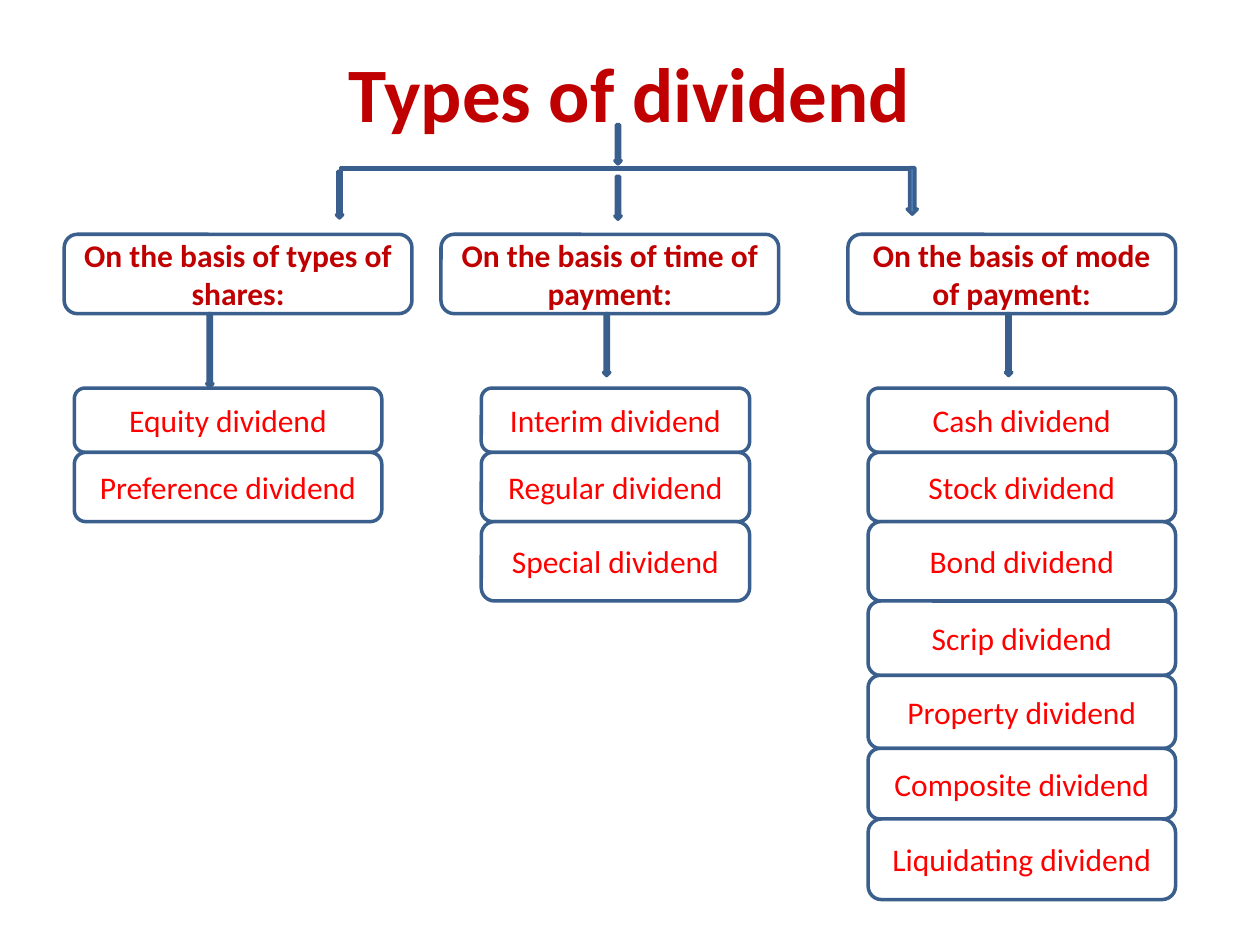
from dataclasses import dataclass
from itertools import accumulate, pairwise

from pptx import Presentation
from pptx.dml.color import RGBColor as Color
from pptx.enum.shapes import MSO_SHAPE as Shape
from pptx.enum.text import MSO_ANCHOR as Anchor, PP_ALIGN as Align
from pptx.util import Inches, Pt


@dataclass(frozen=True)
class Theme:
    font: str = "Calibri"
    title_size: int = 44
    text_size: int = 18
    line_width: int = 2
    heading: str = "C00000"
    item: str = "FF0000"
    box: str = "FFFFFF"
    arrow: str = "4F81BD"
    outline: str = "3A5F8C"


THEME = Theme()

# The grid has 100 columns and 75 rows on a 10 x 7.5 inch slide
CELL = Inches(0.1)
HEADING_TOP, HEADING_HEIGHT = 18.6, 6.3
ITEM_TOP = 30.8
ITEM_HEIGHTS = (5.1, 5.5, 6.3, 5.9, 5.8, 5.6, 6.4)
ITEM_EDGES = list(accumulate(ITEM_HEIGHTS, initial=ITEM_TOP))
ARROW_WIDTH = 0.5

# Each branch: heading, its (left, width), arrow (left, height), items' (left, width), items
BRANCHES = (
    ("On the basis of types of shares:", (5.1, 27.6), (16.4, 5.8), (5.9, 24.4),
     ("Equity dividend", "Preference dividend")),
    ("On the basis of time of payment:", (35, 26.8), (47.9, 4.9), (38.2, 21.3),
     ("Interim dividend", "Regular dividend", "Special dividend")),
    ("On the basis of mode of payment:", (67.3, 26), (79.8, 4.9), (68.9, 24.4),
     ("Cash dividend", "Stock dividend", "Bond dividend", "Scrip dividend",
      "Property dividend", "Composite dividend", "Liquidating dividend")),
)

# Arrows from the title to the headings: left, top, width, height
TOP_ARROWS = (
    (48.8, 9.9, ARROW_WIDTH, 3.1),
    (26.7, 13.6, ARROW_WIDTH, 3.7),
    (48.8, 14, ARROW_WIDTH, 3.4),
    (72, 13.3, 0.8, 3.7),
)
CROSSBAR = (18.9, 13.1, 61.4, 0.5)


def to_grid(area):
    return [round(value * CELL) for value in area]


def write_text(shape, text, color, size=THEME.text_size, bold=False):
    frame = shape.text_frame
    frame.word_wrap = True
    frame.vertical_anchor = Anchor.MIDDLE
    paragraph = frame.paragraphs[0]
    paragraph.alignment = Align.CENTER
    run = paragraph.add_run()
    run.text = text
    values = {"name": THEME.font, "size": Pt(size), "bold": bold}
    for name, value in values.items():
        setattr(run.font, name, value)
    run.font.color.rgb = Color.from_string(color)


def add_title(slide, text, area):
    box = slide.shapes.add_textbox(*to_grid(area))
    write_text(box, text, THEME.heading, THEME.title_size, bold=True)


def add_outlined(slide, kind, area, fill):
    shape = slide.shapes.add_shape(kind, *to_grid(area))
    shape.shadow.inherit = False
    shape.fill.solid()
    shape.fill.fore_color.rgb = Color.from_string(fill)
    shape.line.color.rgb = Color.from_string(THEME.outline)
    shape.line.width = Pt(THEME.line_width)
    return shape


def add_box(slide, text, area, color, bold=False):
    box = add_outlined(slide, Shape.ROUNDED_RECTANGLE, area, THEME.box)
    write_text(box, text, color, bold=bold)


def add_arrow(slide, area):
    add_outlined(slide, Shape.DOWN_ARROW, area, THEME.arrow)


def add_branch(slide, heading, heading_span, arrow_span, item_span, items):
    left, width = heading_span
    add_box(slide, heading, (left, HEADING_TOP, width, HEADING_HEIGHT),
            THEME.heading, bold=True)

    left, height = arrow_span
    add_arrow(slide, (left, HEADING_TOP + HEADING_HEIGHT, ARROW_WIDTH, height))

    left, width = item_span
    for item, (top, bottom) in zip(items, pairwise(ITEM_EDGES)):
        add_box(slide, item, (left, top, width, bottom - top), THEME.item)


def main():
    presentation = Presentation()
    presentation.slide_width = 100 * CELL
    presentation.slide_height = 75 * CELL
    slide = presentation.slides.add_slide(presentation.slide_layouts[6])

    # Title
    add_title(slide, "Types of dividend", (5, 3, 90, 8.5))

    # Branches with their items
    for branch in BRANCHES:
        add_branch(slide, *branch)

    # Crossbar and arrows under the title
    add_outlined(slide, Shape.MATH_MINUS, CROSSBAR, THEME.arrow)
    for area in TOP_ARROWS:
        add_arrow(slide, area)

    presentation.save("out.pptx")


if __name__ == "__main__":
    main()
